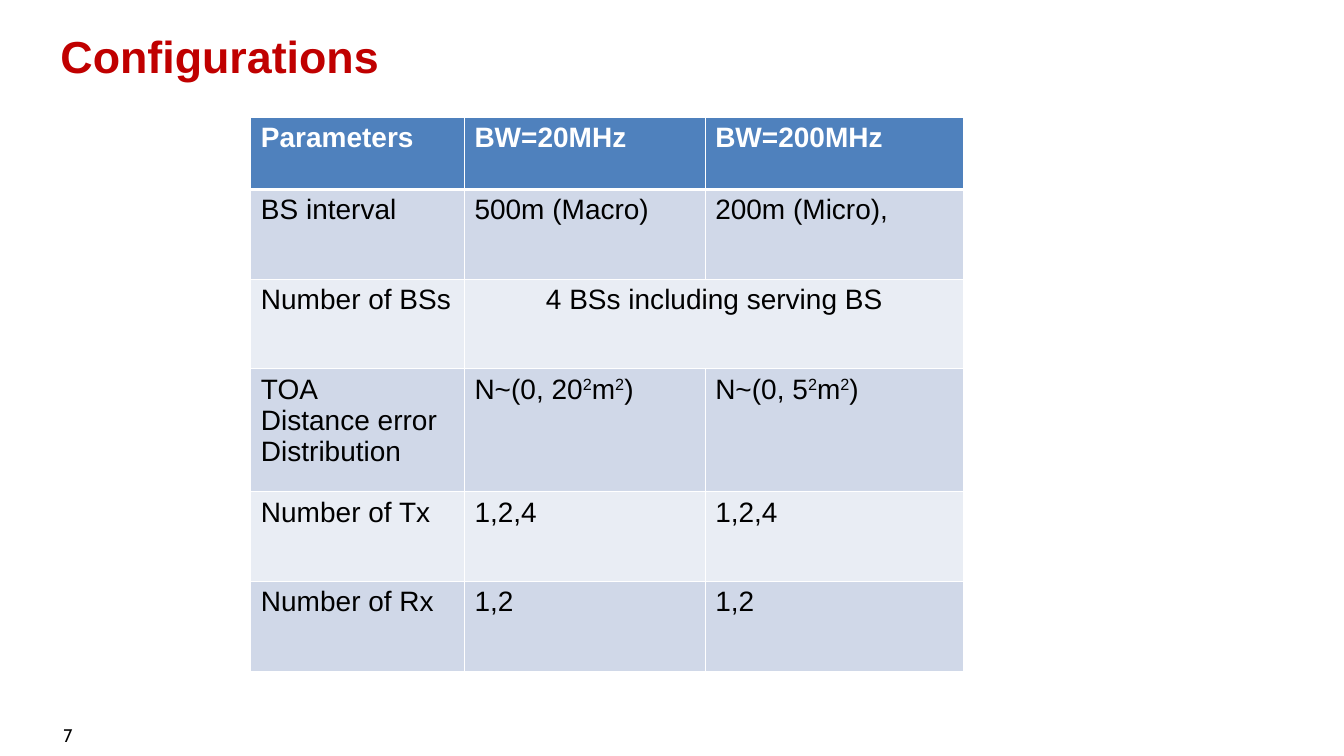
from dataclasses import dataclass

from lxml import etree
from pptx import Presentation
from pptx.dml.color import RGBColor
from pptx.enum.text import MSO_ANCHOR, MSO_AUTO_SIZE, PP_ALIGN
from pptx.oxml.ns import qn
from pptx.util import Emu, Pt

LEFT, CENTER = PP_ALIGN.LEFT, PP_ALIGN.CENTER
MIDDLE = MSO_ANCHOR.MIDDLE
NO_AUTOFIT = MSO_AUTO_SIZE.NONE


@dataclass(frozen=True)
class Theme:
    font: str = "Arial"
    number_font: str = "Cabin"
    title: str = "C00000"
    text: str = "000000"
    white: str = "FFFFFF"
    header: str = "4F81BD"
    bands: tuple = ("D0D8E8", "E9EDF4")
    title_size: int = 32
    table_size: int = 20
    number_size: int = 13


theme = Theme()


def px(length):
    return Emu(length * 9144)


def add_run(paragraph, text, size, color, bold=False, font=theme.font):
    run = paragraph.add_run()
    run.text = text
    run.font.name = font
    run.font.size = Pt(size)
    run.font.bold = bold
    run.font.color.rgb = RGBColor.from_string(color)
    return run


prs = Presentation()
prs.slide_width, prs.slide_height = px(1334), px(750)
slide = prs.slides.add_slide(prs.slide_layouts[5])

title = slide.shapes.title
title.left, title.top, title.width, title.height = px(47), px(-3), px(1239), px(116)
heading = title.text_frame
heading.auto_size = NO_AUTOFIT
heading.vertical_anchor = MIDDLE
heading.margin_left = heading.margin_right = px(13)
heading.margin_top = heading.margin_bottom = px(7)
heading.paragraphs[0].alignment = LEFT
add_run(heading.paragraphs[0], "Configurations", theme.title_size, theme.title, True)

column_widths = [212, 239, 257]
row_heights = [72, 89, 89, 122, 89, 89]
configurations = [
    ["Parameters", "BW=20MHz", "BW=200MHz"],
    ["BS interval", "500m (Macro)", "200m (Micro),"],
    ["Number of BSs", "4 BSs including serving BS", ""],
    ["TOA\nDistance error Distribution", "N~(0, 20^2^m^2^)", "N~(0, 5^2^m^2^)"],
    ["Number of Tx", "1,2,4", "1,2,4"],
    ["Number of Rx", "1,2", "1,2"],
]
table = slide.shapes.add_table(
    len(row_heights), len(column_widths), px(249), px(116),
    px(sum(column_widths)), px(sum(row_heights))).table
for column, width in zip(table.columns, column_widths):
    column.width = px(width)
for row, height in zip(table.rows, row_heights):
    row.height = px(height)
table.cell(2, 1).merge(table.cell(2, 2))
table.cell(2, 1).text_frame.paragraphs[0].alignment = CENTER

for r, values in enumerate(configurations):
    is_header = r == 0
    fill_color = theme.header if is_header else theme.bands[(r - 1) % 2]
    text_color = theme.white if is_header else theme.text
    for c, value in enumerate(values):
        cell = table.cell(r, c)
        properties = cell._tc.get_or_add_tcPr()
        for side in ("lnL", "lnR", "lnT", "lnB"):
            thick = (r, side) in ((0, "lnB"), (1, "lnT"))
            border = etree.SubElement(properties, qn(f"a:{side}"), w=str(Pt(3 if thick else 1)))
            solid = etree.SubElement(border, qn("a:solidFill"))
            etree.SubElement(solid, qn("a:srgbClr"), val=theme.white)
        cell.fill.solid()
        cell.fill.fore_color.rgb = RGBColor.from_string(fill_color)
        if not value:
            continue
        for i, line in enumerate(value.split("\n")):
            frame = cell.text_frame
            paragraph = frame.add_paragraph() if i else frame.paragraphs[0]
            for part, text in enumerate(line.split("^")):
                run = add_run(paragraph, text, theme.table_size, text_color, is_header)
                if part % 2:
                    run.font._element.set("baseline", "30000")

page_number = slide.shapes.add_textbox(px(63), px(722), px(78), px(28)).text_frame
page_number.word_wrap = True
page_number.margin_left = page_number.margin_right = 0
page_number.margin_top = page_number.margin_bottom = 0
page_number.paragraphs[0].line_spacing = 0.85
add_run(page_number.paragraphs[0], "7", theme.number_size, theme.text, font=theme.number_font)

prs.save("out.pptx")
